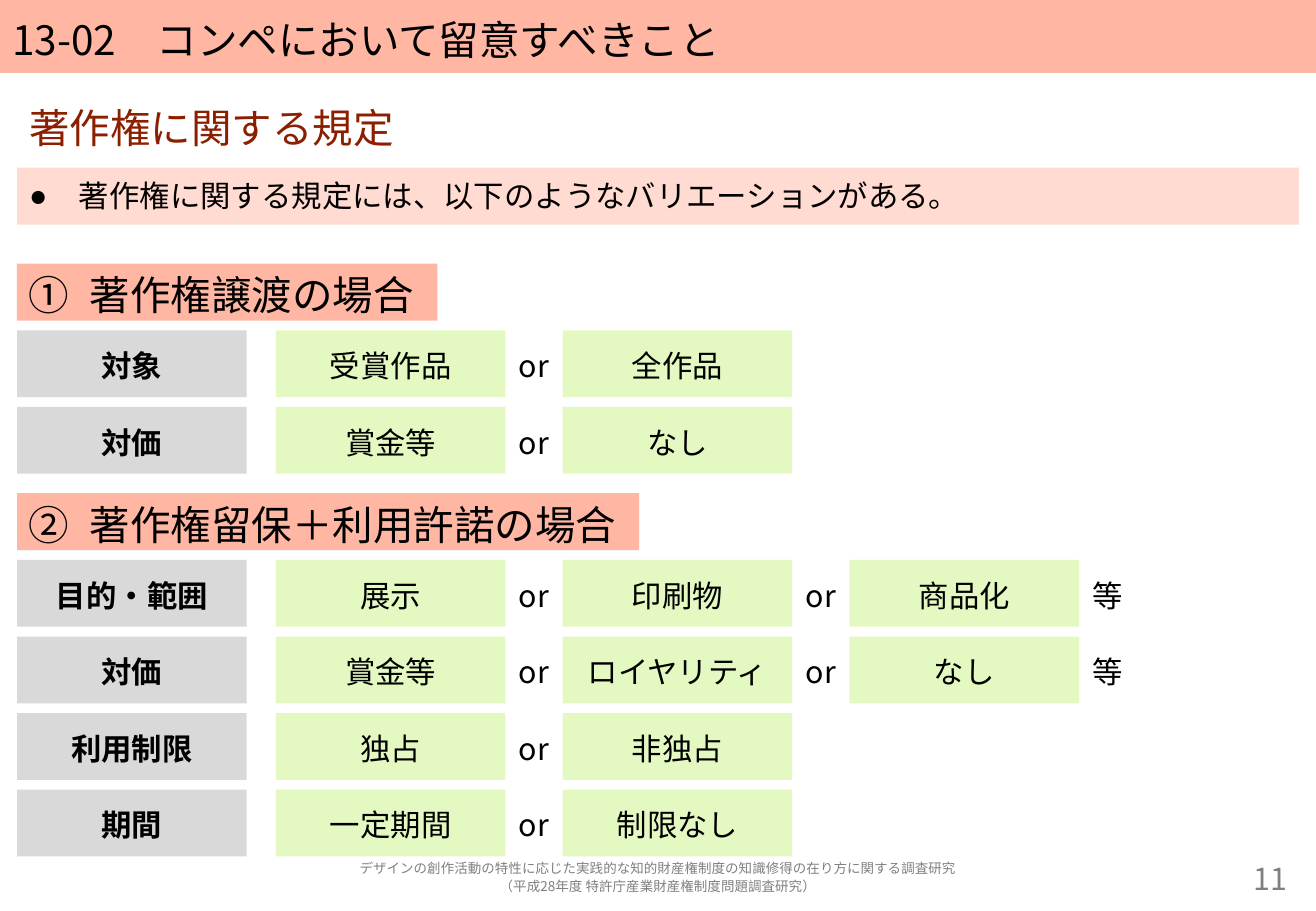
import pptx
import pptx.util
import pptx.dml.color
import pptx.enum.shapes
import pptx.enum.text
import pptx.oxml.ns
from lxml import etree

Inches = pptx.util.Inches
ALIGN = pptx.enum.text.PP_ALIGN
ANCHOR = pptx.enum.text.MSO_ANCHOR
qn = pptx.oxml.ns.qn

# Content
TITLE = "13-02　コンペにおいて留意すべきこと"
SUBTITLE = "著作権に関する規定"
LEAD = "著作権に関する規定には、以下のようなバリエーションがある。"
# top, heading width, heading, rows of (label, options, trailing word)
SECTIONS = [
    (2.17, 3.46, "著作権譲渡の場合", [
        ("対象", ["受賞作品", "全作品"], ""),
        ("対価", ["賞金等", "なし"], ""),
    ]),
    (4.06, 5.12, "著作権留保＋利用許諾の場合", [
        ("目的・範囲", ["展示", "印刷物", "商品化"], "等"),
        ("対価", ["賞金等", "ロイヤリティ", "なし"], "等"),
        ("利用制限", ["独占", "非独占"], ""),
        ("期間", ["一定期間", "制限なし"], ""),
    ]),
]
PAGE_NUMBER = "11"
FOOTER = ("デザインの創作活動の特性に応じた実践的な知的財産権制度の知識修得の在り方に関する調査研究\n"
          "（平成28年度 特許庁産業財産権制度問題調査研究）")

# Style and grid
FONT = "Noto Sans CJK JP"
COLORS = {"heading": "FFB7A3", "lead": "FFDBD1", "label": "D9D9D9", "option": "E4F9C1",
          "text": "000000", "subtitle": "8C1F00", "muted": "808080"}
PAGE_W, PAGE_H = 10.83, 7.5
LEFT, FULL_W = 0.14, 10.55
BAR_H, CELL_W, CELL_H = 0.47, 1.89, 0.55
OPTION_LEFT, JOIN_W = 2.27, 0.47
ROW_OFFSET, ROW_PITCH = 0.55, 0.63
FOOT_TOP, FOOT_H = 7.06, 0.31


def rgb(name):
    return pptx.dml.color.RGBColor.from_string(COLORS[name])


def write(box, text, size=18, color="text", align=ALIGN.CENTER, anchor=ANCHOR.MIDDLE, bold=False):
    frame = box.text_frame
    frame.text = text
    frame.word_wrap = True
    frame.auto_size = pptx.enum.text.MSO_AUTO_SIZE.NONE
    frame.vertical_anchor = anchor
    for para in frame.paragraphs:
        para.alignment = align
        para.line_spacing = 1.1
        for span in para.runs:
            span.font.size = pptx.util.Pt(size)
            span.font.bold = bold
            span.font.name = FONT
            span.font.color.rgb = rgb(color)
            etree.SubElement(span.font._element, qn("a:ea"), typeface=FONT)


def set_bullet(box, tag, indent=0, **settings):
    properties = box.text_frame.paragraphs[0]._p.get_or_add_pPr()
    properties.set("marL", str(Inches(indent)))
    properties.set("indent", str(-Inches(indent)))
    etree.SubElement(properties, qn(tag), **settings)


def place(box, left, top, width, height, fill=None):
    box.left, box.top, box.width, box.height = map(Inches, (left, top, width, height))
    if fill:
        box.fill.solid()
        box.fill.fore_color.rgb = rgb(fill)


def add_block(left, top, width, height, fill, text, **style):
    block = page.shapes.add_shape(pptx.enum.shapes.MSO_SHAPE.RECTANGLE,
                                  *map(Inches, (left, top, width, height)))
    block.shadow.inherit = False
    block.fill.solid()
    block.fill.fore_color.rgb = rgb(fill)
    block.line.fill.background()
    write(block, text, **style)
    return block


def add_label(left, top, width, height, text, **style):
    label = page.shapes.add_textbox(*map(Inches, (left, top, width, height)))
    write(label, text, **style)
    return label


deck = pptx.Presentation()
deck.slide_width, deck.slide_height = Inches(PAGE_W), Inches(PAGE_H)
page = deck.slides.add_slide(deck.slide_layouts.get_by_name("Two Content"))

# Title, lead sentence and subtitle
title, lead, subtitle = page.placeholders
place(title, 0, 0, PAGE_W, 0.6, "heading")
write(title, TITLE, size=24, align=ALIGN.LEFT)
place(lead, LEFT, 1.38, FULL_W, BAR_H, "lead")
write(lead, LEAD, align=ALIGN.LEFT, anchor=ANCHOR.TOP)
set_bullet(lead, "a:buChar", 0.41, char="●")
place(subtitle, LEFT, 0.76, FULL_W, BAR_H)
write(subtitle, SUBTITLE, size=24, color="subtitle", align=ALIGN.LEFT, anchor=ANCHOR.TOP)
set_bullet(subtitle, "a:buNone")

# Sections: numbered heading, then rows of a label and its options
for number, (top, width, heading, rows) in enumerate(SECTIONS, 1):
    bar = add_block(LEFT, top, width, BAR_H, "heading", heading, size=24, align=ALIGN.LEFT)
    set_bullet(bar, "a:buAutoNum", 0.5, type="circleNumDbPlain", startAt=str(number))
    for row, (label, options, ending) in enumerate(rows):
        row_top = top + ROW_OFFSET + row * ROW_PITCH
        add_block(LEFT, row_top, CELL_W, CELL_H, "label", label, bold=True)
        joins = ["or"] * (len(options) - 1) + [ending]
        for column, (option, join) in enumerate(zip(options, joins)):
            left = OPTION_LEFT + column * (CELL_W + JOIN_W)
            add_block(left, row_top, CELL_W, CELL_H, "option", option)
            if join:
                word = add_label(left + CELL_W, row_top, JOIN_W, CELL_H, join)
                word.text_frame.margin_left = word.text_frame.margin_right = 0

# Footer and page number
add_label(LEFT, FOOT_TOP, FULL_W, FOOT_H, FOOTER, size=8, color="muted")
add_label(9.35, FOOT_TOP, 1.34, FOOT_H, PAGE_NUMBER, color="muted", align=ALIGN.RIGHT)

deck.save("out.pptx")
